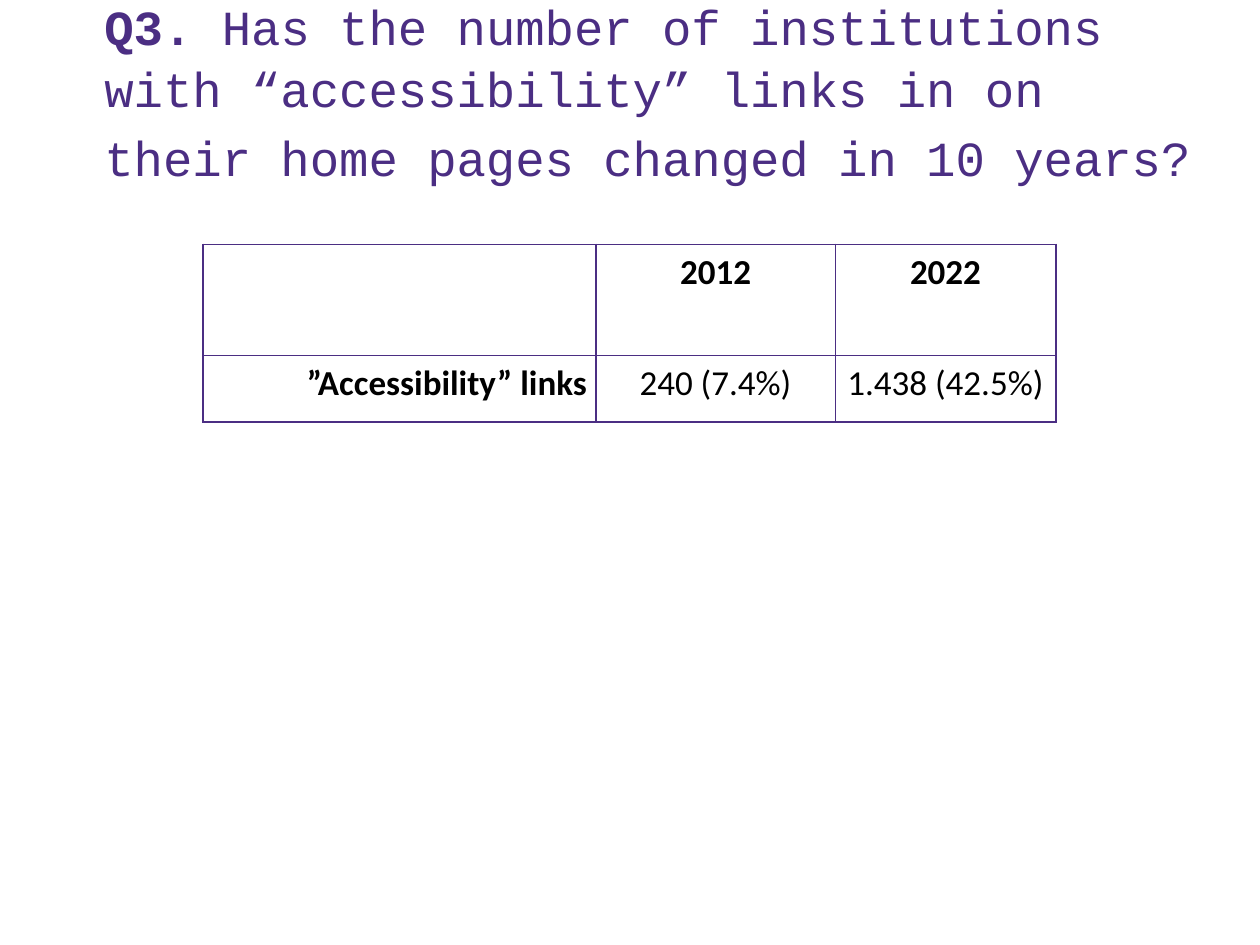
from pptx import Presentation
from pptx.dml.color import RGBColor
from pptx.enum.text import MSO_ANCHOR, PP_ALIGN
from pptx.oxml import parse_xml
from pptx.oxml.ns import nsdecls
from pptx.util import Inches, Pt

BOTTOM = MSO_ANCHOR.BOTTOM
CENTER, RIGHT = PP_ALIGN.CENTER, PP_ALIGN.RIGHT
COLORS = {"purple": "4B2E83", "black": "000000"}


class Deck:
    def __init__(self):
        self.prs = Presentation()
        self.prs.slide_width, self.prs.slide_height = Inches(10), Inches(7.5)
        self.slide = self.prs.slides.add_slide(self.prs.slide_layouts[6])

    def run(self, para, text, size, font, color, bold=False):
        run = para.add_run()
        run.text = text
        run.font.size, run.font.name, run.font.bold = Pt(size), font, bold
        run.font.color.rgb = RGBColor.from_string(COLORS[color])

    def title(self, box, runs):
        frame = self.slide.shapes.add_textbox(*map(Inches, box)).text_frame
        frame.word_wrap = True
        frame.vertical_anchor = BOTTOM
        frame.margin_top = frame.margin_bottom = 0
        para = frame.paragraphs[0]
        para.line_spacing = 1.05
        for text, size, bold in runs:
            self.run(para, text, size, "Courier New", "purple", bold)

    def border(self, cell):
        """Draw all four sides; lines must come before the fill in tcPr."""
        props = cell._tc.get_or_add_tcPr()
        for spot, side in enumerate(("lnL", "lnR", "lnT", "lnB")):
            props.insert(spot, parse_xml(
                f'<a:{side} {nsdecls("a")} w="{Pt(1)}"><a:solidFill>'
                f'<a:srgbClr val="{COLORS["purple"]}"/></a:solidFill></a:{side}>'))

    def table(self, left, top, widths, heights, rows):
        """Bold the header row and first column; right-align the row labels."""
        table = self.slide.shapes.add_table(
            len(heights), len(widths), Inches(left), Inches(top),
            Inches(sum(widths)), Inches(sum(heights))).table
        table.first_row = table.horz_banding = False
        for col, width in zip(table.columns, widths):
            col.width = Inches(width)
        for row, height in zip(table.rows, heights):
            row.height = Inches(height)
        for i, row in enumerate(rows):
            for j, text in enumerate(row):
                cell = table.cell(i, j)
                cell.fill.background()
                self.border(cell)
                cell.margin_left = cell.margin_right = Inches(0.07)
                cell.margin_top = cell.margin_bottom = Inches(0.05)
                if text:
                    para = cell.text_frame.paragraphs[0]
                    para.alignment = CENTER if j else RIGHT
                    para.space_after = Pt(1)
                    self.run(para, text, 20, "Calibri", "black", i == 0 or j == 0)


def main():
    deck = Deck()
    deck.title((0.73, 0.41, 8.95, 1.08), [
        ("Q3. ", 28, True),
        ("Has the number of institutions with “accessibility” links in on "
         "their home pages changed in 10 years?", 28, False),
        (" ", 32, False)])
    deck.table(1.61, 1.94, (3.12, 1.9, 1.75), (0.88, 0.53), [
        ("", "2012", "2022"),
        ("”Accessibility” links", "240 (7.4%)", "1.438 (42.5%)")])
    deck.prs.save("out.pptx")


if __name__ == "__main__":
    main()
